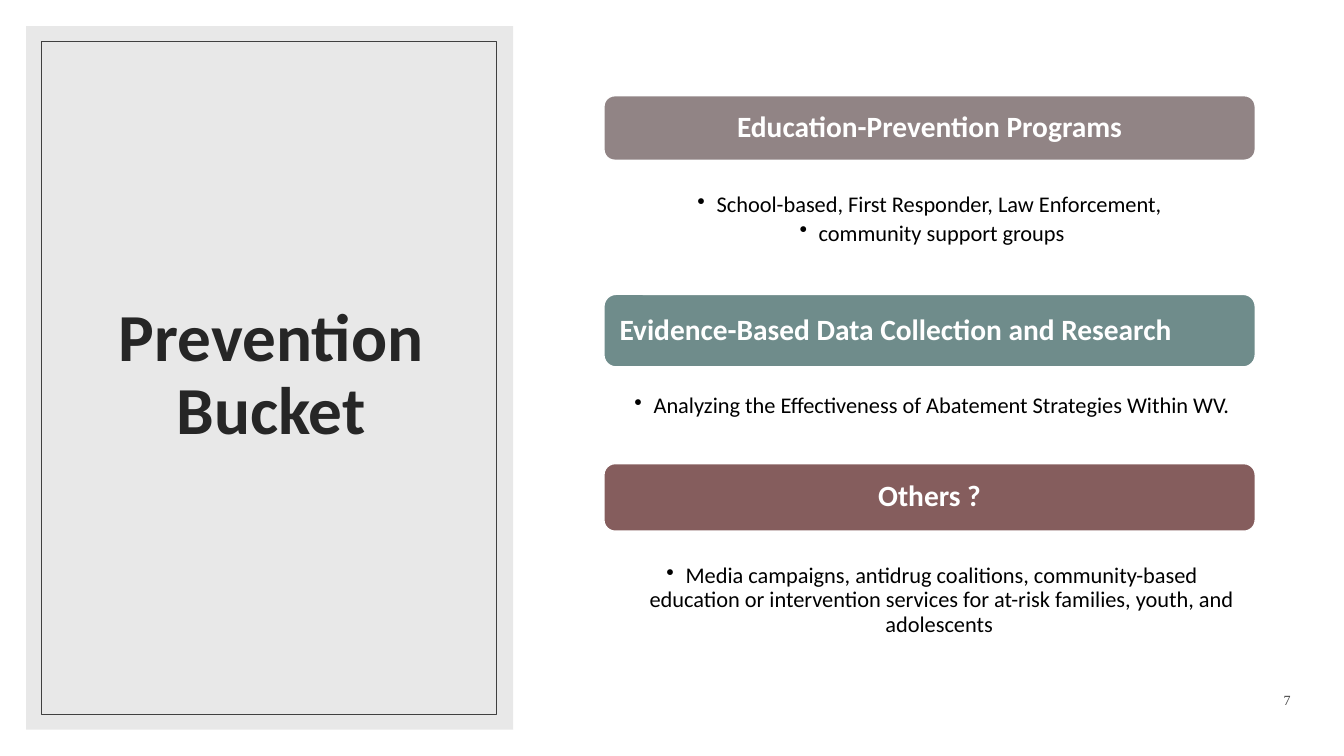
from lxml.etree import SubElement
from pptx import Presentation
from pptx.dml.color import RGBColor
from pptx.enum.shapes import MSO_SHAPE
from pptx.enum.text import MSO_ANCHOR, PP_ALIGN
from pptx.oxml.ns import qn
from pptx.util import Inches, Pt

WHITE = RGBColor(0xFF, 0xFF, 0xFF)
BLACK = RGBColor(0x00, 0x00, 0x00)
PANEL_GREY = RGBColor(0xD9, 0xD9, 0xD9)
TITLE_GREY = RGBColor(0x26, 0x26, 0x26)
FRAME_GREY = RGBColor(0x40, 0x40, 0x40)
TAUPE = RGBColor(0x91, 0x84, 0x85)
TEAL = RGBColor(0x6F, 0x8C, 0x8B)
MAROON = RGBColor(0x85, 0x5D, 0x5D)

# Heading, alignment, colour, bar height, list height, list items
SECTIONS = [
    ("Education-Prevention Programs", PP_ALIGN.CENTER, TAUPE, 0.64, 1.33,
     ["School-based, First Responder, Law Enforcement, ",
      "community support groups"]),
    ("Evidence-Based Data Collection and Research", PP_ALIGN.LEFT, TEAL, 0.72, 0.96,
     ["Analyzing the Effectiveness of Abatement Strategies Within WV."]),
    ("Others ?", PP_ALIGN.CENTER, MAROON, 0.67, 1.25,
     ["Media campaigns, antidrug coalitions, community-based education or "
      "intervention services for at-risk families, youth, and adolescents "]),
]


def add_run(paragraph, text, size, color, bold=False, font="Calibri"):
    run = paragraph.add_run()
    run.text = text
    run.font.name = font
    run.font.size = Pt(size)
    run.font.bold = bold
    run.font.color.rgb = color


def set_frame(frame, anchor, left, top, right, bottom):
    frame.word_wrap = True
    frame.vertical_anchor = anchor
    frame.margin_left, frame.margin_top = Inches(left), Inches(top)
    frame.margin_right, frame.margin_bottom = Inches(right), Inches(bottom)


def add_box(slide, kind, left, top, width, height):
    box = slide.shapes.add_shape(
        kind, Inches(left), Inches(top), Inches(width), Inches(height))
    box.shadow.inherit = False
    return box


def add_title_panel(slide, left, top, width, height):
    # Translucent panel
    panel = add_box(slide, MSO_SHAPE.RECTANGLE, left, top, width, height)
    panel.fill.solid()
    panel.fill.fore_color.rgb = PANEL_GREY
    panel.line.fill.background()
    color = panel.fill._xPr.find(qn("a:solidFill"))[0]
    SubElement(color, qn("a:alpha"), val="60000")

    # Title, stacked above the panel
    title = slide.shapes.title
    title.left, title.top = Inches(left + 0.37), Inches(top + 0.35)
    title.width, title.height = Inches(width - 0.71), Inches(height - 0.74)
    set_frame(title.text_frame, MSO_ANCHOR.MIDDLE, 0.1, 0.05, 0.1, 0.05)
    heading = title.text_frame.paragraphs[0]
    heading.alignment = PP_ALIGN.CENTER
    heading.line_spacing = 0.9
    add_run(heading, "Prevention", 48, TITLE_GREY, bold=True)
    heading.add_line_break()
    add_run(heading, "Bucket", 48, TITLE_GREY, bold=True)
    panel._element.addnext(title._element)

    # Thin inner frame
    border = add_box(slide, MSO_SHAPE.RECTANGLE,
                     left + 0.15, top + 0.15, width - 0.32, height - 0.3)
    border.fill.background()
    border.line.color.rgb = FRAME_GREY
    border.line.width = Pt(0.5)


def add_heading_bar(slide, text, alignment, color, left, top, width, height):
    bar = add_box(slide, MSO_SHAPE.ROUNDED_RECTANGLE, left, top, width, height)
    bar.fill.solid()
    bar.fill.fore_color.rgb = color
    bar.line.color.rgb = WHITE
    bar.line.width = Pt(1)
    set_frame(bar.text_frame, MSO_ANCHOR.MIDDLE, 0.12, 0.09, 0.12, 0.09)
    heading = bar.text_frame.paragraphs[0]
    heading.alignment = alignment
    heading.line_spacing = 0.9
    add_run(heading, text, 21, WHITE, bold=True)


def add_bullets(slide, items, left, top, width, height):
    listing = slide.shapes.add_textbox(
        Inches(left), Inches(top), Inches(width), Inches(height))
    frame = listing.text_frame
    set_frame(frame, MSO_ANCHOR.TOP, 0.21, 0.33, 0.16, 0.03)
    for index, item in enumerate(items):
        bullet = frame.add_paragraph() if index else frame.paragraphs[0]
        bullet.level = 1
        bullet.alignment = PP_ALIGN.CENTER
        bullet.line_spacing = 0.9
        bullet.space_after = Pt(3)
        properties = bullet._p.get_or_add_pPr()
        properties.set("marL", str(Inches(0.19)))
        properties.set("indent", str(-Inches(0.19)))
        SubElement(properties, qn("a:buChar"), char="•")
        add_run(bullet, item, 16, BLACK)


def add_sections(slide, left, top, width):
    for heading, alignment, color, bar_height, list_height, items in SECTIONS:
        add_heading_bar(slide, heading, alignment, color, left, top, width, bar_height)
        top += bar_height
        add_bullets(slide, items, left, top, width, list_height)
        top += list_height


def add_page_number(slide, left, top, width, height):
    page = slide.shapes.add_textbox(
        Inches(left), Inches(top), Inches(width), Inches(height))
    set_frame(page.text_frame, MSO_ANCHOR.BOTTOM, 0.1, 0.05, 0.1, 0.05)
    number = page.text_frame.paragraphs[0]
    number.alignment = PP_ALIGN.RIGHT
    number.space_after = Pt(6)
    add_run(number, "7", 10, FRAME_GREY, font="Times New Roman")


def main():
    deck = Presentation()
    deck.slide_width, deck.slide_height = Inches(13.33), Inches(7.5)
    slide = deck.slides.add_slide(deck.slide_layouts[5])
    slide.background.fill.solid()
    slide.background.fill.fore_color.rgb = WHITE
    add_title_panel(slide, 0.26, 0.26, 4.83, 6.98)
    add_page_number(slide, 12, 6.78, 0.9, 0.3)
    add_sections(slide, 5.99, 0.95, 6.46)
    deck.save("out.pptx")


if __name__ == "__main__":
    main()
